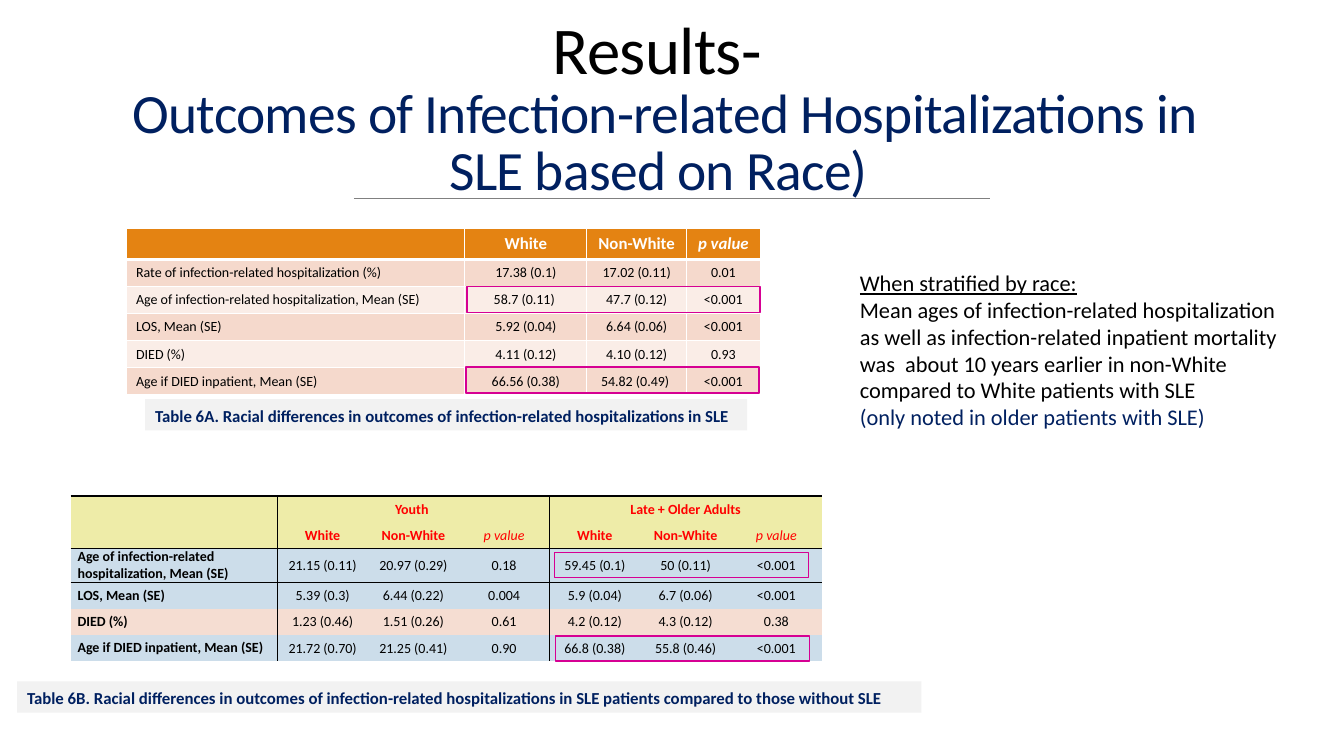
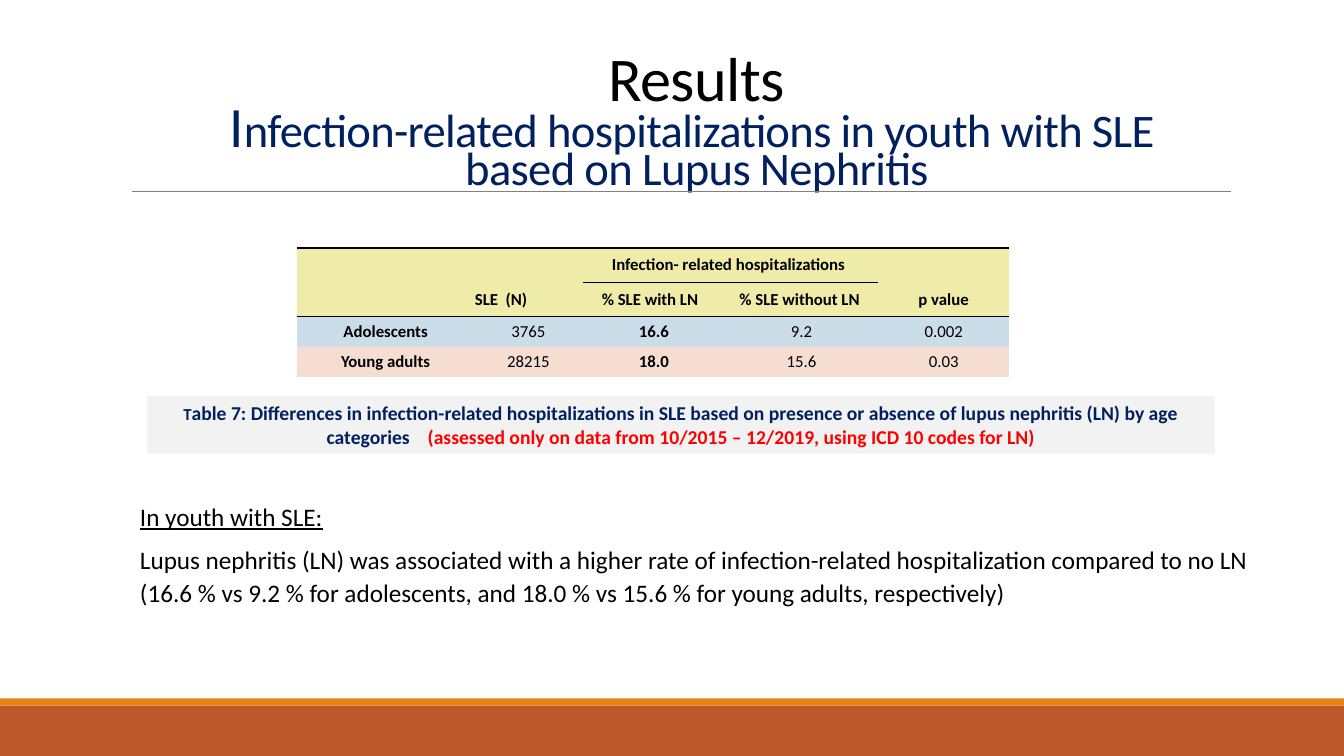
from lxml import etree
from pptx import Presentation
from pptx.dml.color import RGBColor
from pptx.enum.shapes import MSO_CONNECTOR, MSO_SHAPE
from pptx.enum.text import MSO_ANCHOR, MSO_AUTO_SIZE, PP_ALIGN
from pptx.oxml.ns import qn
from pptx.util import Inches, Pt

LEFT, CENTER = PP_ALIGN.LEFT, PP_ALIGN.CENTER
BOTTOM, MIDDLE, TOP = MSO_ANCHOR.BOTTOM, MSO_ANCHOR.MIDDLE, MSO_ANCHOR.TOP
RECTANGLE, STRAIGHT = MSO_SHAPE.RECTANGLE, MSO_CONNECTOR.STRAIGHT
NO_AUTOFIT = MSO_AUTO_SIZE.NONE
TITLE_ONLY = 5
FONT = "Calibri"
BREAK = ("\n", {})
COLORS = {
    "black": "000000", "white": "FFFFFF", "navy": "002060", "red": "FF0000",
    "gray": "808080", "caption": "F2F2F2", "magenta": "D60093",
    "orange": "E48312", "rust": "BD582C", "rose": "F5D9CC", "blush": "FAEDE7",
    "yellow": "EEECA8", "blue": "CCDDEA", "peach": "F5DDD2",
}


def rgb(name):
    return RGBColor.from_string(COLORS[name])


def inches(*lengths):
    return [Inches(length) for length in lengths]


class SlideBuilder:
    def __init__(self):
        self.deck = Presentation()
        self.deck.slide_width, self.deck.slide_height = inches(13.33, 7.5)
        self.page = None

    def new_page(self):
        self.page = self.deck.slides.add_slide(self.deck.slide_layouts[TITLE_ONLY])

    def add_spans(self, para, spans, align=LEFT, spacing=1.0, after=0):
        """Add (text, options) spans; options carry over to later spans."""
        para.alignment, para.line_spacing = align, spacing
        para.space_before, para.space_after = Pt(0), Pt(after)
        style = {"color": "black"}
        for text, changes in spans:
            if text == "\n":
                para.add_line_break()
                continue
            style.update(changes)
            span = para.add_run()
            span.text = text
            font = span.font
            font.name, font.size = FONT, Pt(style["size"])
            font.color.rgb = rgb(style["color"])
            font.bold = style.get("bold", False)
            font.italic = style.get("italic", False)
            font.underline = style.get("underline", False)
            if "tracking" in style:
                font._element.set("spc", str(round(style["tracking"] * 100)))

    def fill_frame(self, frame, paragraphs, anchor=TOP, **layout):
        frame.word_wrap, frame.auto_size = True, NO_AUTOFIT
        frame.vertical_anchor = anchor
        for index, spans in enumerate(paragraphs):
            para = frame.add_paragraph() if index else frame.paragraphs[0]
            self.add_spans(para, spans, **layout)

    def title(self, at, paragraphs, spacing):
        box = self.page.shapes.title
        box.left, box.top, box.width, box.height = inches(*at)
        self.fill_frame(box.text_frame, paragraphs, BOTTOM, align=CENTER, spacing=spacing)

    def text(self, at, paragraphs, **layout):
        box = self.page.shapes.add_textbox(*inches(*at))
        self.fill_frame(box.text_frame, paragraphs, **layout)

    def rectangle(self, at, fill=None, line=None):
        box = self.page.shapes.add_shape(RECTANGLE, *inches(*at))
        box.shadow.inherit = False
        if fill:
            box.fill.solid()
            box.fill.fore_color.rgb = rgb(fill)
        else:
            box.fill.background()
        if line:
            box.line.color.rgb, box.line.width = rgb(line), Pt(1)
        else:
            box.line.fill.background()
        return box

    def caption(self, at, spans, **layout):
        box = self.rectangle(at, "caption")
        self.fill_frame(box.text_frame, [spans], **layout)

    def highlight(self, left, top, width, height):
        self.rectangle((left, top, width, height), line="magenta")

    def rule(self, left, right, top, weight):
        line = self.page.shapes.add_connector(STRAIGHT, *inches(left, top, right, top))
        line.line.color.rgb, line.line.width = rgb("gray"), Pt(weight)
        etree.SubElement(line._element.spPr, qn("a:effectLst"))

    def footer_bands(self):
        self.rectangle((0, 7, 13.33, 0.5), "rust")
        self.rectangle((0, 6.93, 13.33, 0.07), "orange")

    def border(self, cell, side, weight, color):
        line = etree.SubElement(cell._tc.get_or_add_tcPr(), qn("a:ln" + side))
        line.set("w", str(Pt(weight)))
        if weight:
            paint = etree.SubElement(line, qn("a:solidFill"))
            etree.SubElement(paint, qn("a:srgbClr")).set("val", COLORS[color])
        else:
            etree.SubElement(line, qn("a:noFill"))

    def table(self, left, top, widths, heights, rows, fills, style, margins,
              across, down, line_color="black", merges=()):
        """style(row, column) gives text options and paragraph layout;
        across(line, column) and down(line) give the weights of grid lines."""
        size = inches(left, top, sum(widths), sum(heights))
        grid = self.page.shapes.add_table(len(rows), len(widths), *size).table
        grid.first_row = grid.horz_banding = False
        for column, width in zip(grid.columns, widths):
            column.width = Inches(width)
        for r, texts in enumerate(rows):
            grid.rows[r].height = Inches(heights[r])
            for c, text in enumerate(texts):
                cell = grid.cell(r, c)
                cell.margin_left = cell.margin_right = Inches(margins[0])
                cell.margin_top = cell.margin_bottom = Inches(margins[1])
                cell.vertical_anchor = MIDDLE
                for side, weight in (("L", down(c)), ("R", down(c + 1)),
                                     ("T", across(r, c)), ("B", across(r + 1, c))):
                    self.border(cell, side, weight, line_color)
                cell.fill.solid()
                cell.fill.fore_color.rgb = rgb(fills[r])
                options, layout = style(r, c)
                para = cell.text_frame.paragraphs[0]
                if text:
                    self.add_spans(para, [(text, options)], **layout)
                else:
                    end = etree.SubElement(para._p, qn("a:endParaRPr"))
                    end.set("sz", str(options["size"] * 100))
        for r, first, last in merges:
            grid.cell(r, first).merge(grid.cell(r, last))


def race_style(r, c):
    layout = {"align": CENTER if c or not r else LEFT}
    if r == 0:
        return {"size": 12, "color": "white", "bold": True, "italic": c == 3}, layout
    return {"size": 10}, layout


def age_style(r, c):
    is_p_value = r == 1 and c in (3, 6)
    options = {"size": 10, "color": "red" if r < 2 else "black", "italic": is_p_value,
               "bold": (r < 2 or c == 0) and not is_p_value}
    return options, {"align": CENTER, "spacing": 1.07} if c else {}


def nephritis_style(r, c):
    options = {"size": 12, "bold": r < 2 or c in (0, 2)}
    return options, {"align": LEFT if (r, c) == (1, 1) else CENTER}


def race_slide(slides):
    slides.new_page()
    slides.title((0.95, 0.03, 11.28, 2.02), [[
        ("Results- ", {"size": 47.7, "tracking": -0.5}), BREAK,
        ("Outcomes of Infection-related Hospitalizations in SLE based on Race) ",
         {"size": 39.6, "color": "navy"}),
    ]], spacing=0.85)
    slides.rule(3.51, 9.82, 1.97, 1)
    slides.table(
        1.25, 2.27, [3.36, 1.21, 0.99, 0.73], [0.26] * 6,
        [["", "White", "Non-White", "p value"],
         ["Rate of infection-related hospitalization (%)", "17.38 (0.1)", "17.02 (0.11)", "0.01"],
         ["Age of infection-related hospitalization, Mean (SE)", "58.7 (0.11) ", "47.7 (0.12)",
          "<0.001"],
         ["LOS, Mean (SE)", "5.92 (0.04)", "6.64 (0.06)", "<0.001"],
         ["DIED (%)", "4.11 (0.12)", "4.10 (0.12)", "0.93"],
         ["Age if DIED inpatient, Mean (SE)", "66.56 (0.38)", "54.82 (0.49) ", "<0.001"]],
        ["orange", "rose", "blush", "rose", "blush", "rose"], race_style, (0.1, 0.05),
        across=lambda line, column: 3 if line == 1 else 1,
        down=lambda line: 1, line_color="white")
    slides.table(
        0.7, 4.92, [2.05] + [0.9] * 6, [0.26] * 6,
        [["", "Youth ", "", "", "Late + Older Adults", "", ""],
         [""] + ["White", "Non-White", "p value"] * 2,
         ["Age of infection-related hospitalization, Mean (SE)", "21.15 (0.11)", "20.97 (0.29)",
          "0.18", "59.45 (0.1)", "50 (0.11)", "<0.001"],
         ["LOS, Mean (SE)", "5.39 (0.3)", "6.44 (0.22)", "0.004", "5.9 (0.04)", "6.7 (0.06)",
          "<0.001"],
         ["DIED (%)", "1.23 (0.46)", "1.51 (0.26)", "0.61", "4.2 (0.12)", "4.3 (0.12)", "0.38"],
         ["Age if DIED inpatient, Mean (SE)", "21.72 (0.70)", "21.25 (0.41)", "0.90",
          "66.8 (0.38)", "55.8 (0.46)", "<0.001"]],
        ["yellow", "yellow", "blue", "blue", "peach", "blue"], age_style, (0.07, 0),
        across=lambda line, column: int(line in (0, 2, 3)),
        down=lambda line: int(line in (1, 4)), merges=[(0, 1, 3), (0, 4, 6)])
    caption = {"size": 12, "color": "navy", "bold": True}
    outcomes = "Racial differences in outcomes of infection-related hospitalizations in SLE"
    for at, text in (
        ((1.44, 3.96, 5.97, 0.31), f"Table 6A. {outcomes}"),
        ((0.17, 6.76, 8.97, 0.31), f"Table 6B. {outcomes} patients compared to those without SLE"),
    ):
        slides.caption(at, [(text, caption)], spacing=1.07)
    slides.text((8.43, 2.62, 4.41, 1.72), [
        [("When stratified by race:", {"size": 16, "underline": True})],
        [("Mean ages of infection-related hospitalization as well as infection-related inpatient "
          "mortality was  about 10 years earlier in non-White compared to White patients with SLE",
          {"size": 16})],
        [("(only noted in older patients with SLE)", {"size": 16, "color": "navy"})],
    ])
    for left, top, width, height in ((4.63, 2.84, 2.91, 0.26), (4.62, 3.64, 2.91, 0.26),
                                     (5.5, 5.48, 2.52, 0.25), (5.51, 6.31, 2.52, 0.25)):
        slides.highlight(left, top, width, height)


def nephritis_slide(slides):
    slides.new_page()
    slides.footer_bands()
    slides.rule(1.31, 12.21, 1.9, 0.5)
    subtitle = {"size": 33.3, "color": "navy", "tracking": -0.5}
    slides.title((0.34, 0.28, 13.14, 1.68), [
        [("Results", {"size": 44.4, "tracking": -0.5}), BREAK,
         ("I", {"size": 40.7, "color": "navy"}),
         ("nfection-related hospitalizations in youth with SLE ", subtitle)],
        [("based on Lupus Nephritis", subtitle)],
    ], spacing=0.65)
    slides.table(
        2.95, 2.46, [1.75, 1.08, 1.41, 1.52, 1.3], [0.34, 0.34, 0.3, 0.3],
        [["", "", "Infection- related hospitalizations ", "", ""],
         ["", "SLE  (N)", "% SLE with LN  ", "% SLE without LN ", "p value"],
         ["Adolescents", "3765", "16.6", "9.2", "0.002"],
         ["Young adults", "28215", "18.0", "15.6", "0.03"]],
        ["yellow", "yellow", "blue", "peach"], nephritis_style, (0.01, 0.01),
        across=lambda line, column: int(line in (0, 2) or (line == 1 and column in (2, 3))),
        down=lambda line: 0, merges=[(0, 2, 3)])
    slides.caption((1.46, 3.93, 10.59, 0.57), [
        ("T", {"size": 12, "color": "navy", "bold": True}),
        ("able 7: Differences in infection-related hospitalizations in SLE based on presence or "
         "absence of lupus nephritis (LN) by age categories", {"size": 14}),
        (" ", {"tracking": 9.5}),
        ("(assessed only on data from 10/2015 – 12/2019, using ICD 10 codes for LN)",
         {"color": "red", "tracking": 0}),
    ], align=CENTER)
    slides.text((1.29, 4.9, 11.24, 1.17), [
        [("In youth with SLE:", {"size": 18, "underline": True})],
        [("Lupus nephritis (LN) was associated with a higher rate of infection-related "
          "hospitalization compared to no LN (16.6 % vs 9.2 % for adolescents, and 18.0 % vs "
          "15.6 % for young adults, respectively)", {"size": 18})],
    ], spacing=1.07, after=8)


def main():
    slides = SlideBuilder()
    race_slide(slides)
    nephritis_slide(slides)
    slides.deck.save("out.pptx")


if __name__ == "__main__":
    main()
